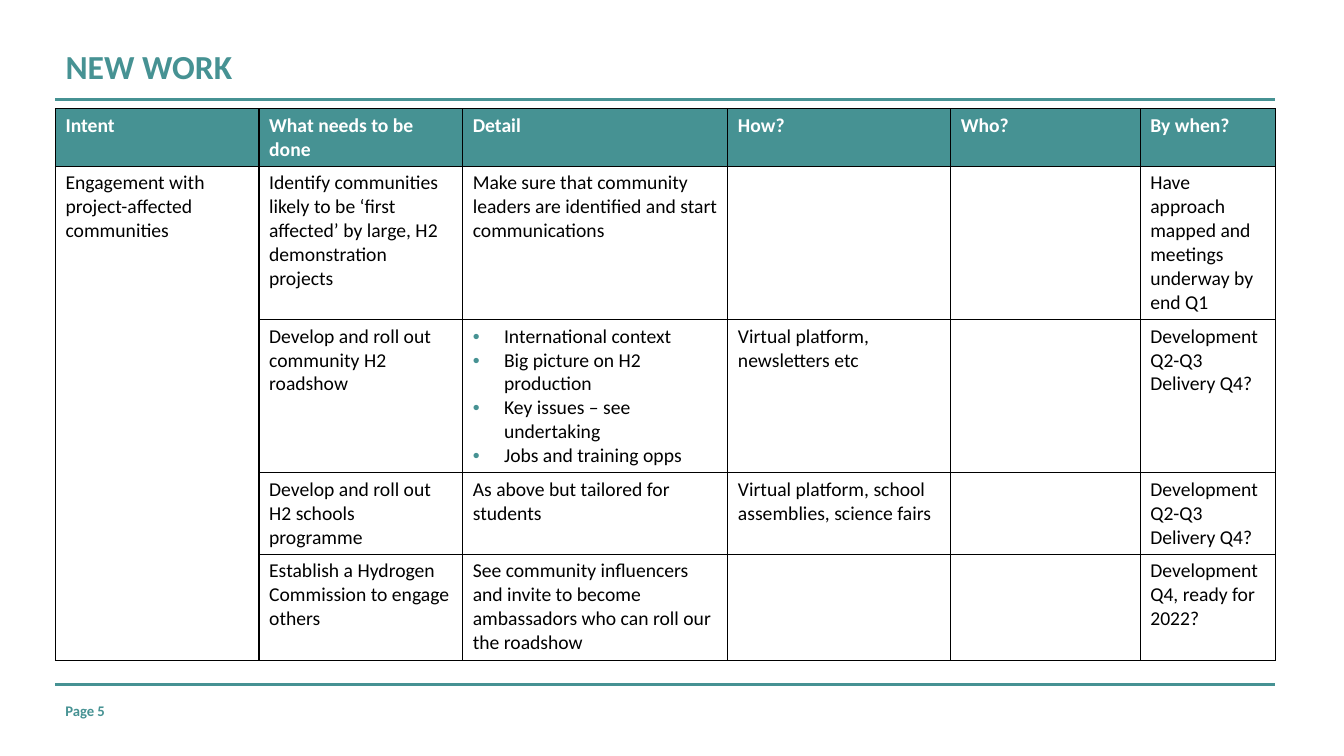
"""Builds the NEW WORK slide: a plan table between two teal rules."""
from lxml import etree
from pptx import Presentation, util as u
from pptx.dml.color import RGBColor
from pptx.enum import shapes, text
from pptx.oxml import ns

PX = 9144
TEAL = RGBColor(0x46, 0x92, 0x93)
BLACK = RGBColor(0, 0, 0)
WHITE = RGBColor(255, 255, 255)

LEFT, WIDTH = 55, 1210
COLS = [202, 202, 263, 221, 188, 134]
ROWS = [57, 152, 152, 81, 105]
PLAN = [
    ["Intent", "What needs to be done", "Detail", "How?", "Who?", "By when?"],
    ["Engagement with project-affected communities",
     "Identify communities likely to be ‘first affected’ by large, H2 demonstration projects",
     "Make sure that community leaders are identified and start communications",
     "", "", "Have approach mapped and meetings underway by end Q1"],
    ["", "Develop and roll out community H2 roadshow",
     "International context\nBig picture on H2 production\n"
     "Key issues – see undertaking\nJobs and training opps",
     "Virtual platform,\nnewsletters etc", "", "Development Q2-Q3\nDelivery Q4?"],
    ["", "Develop and roll out H2 schools programme",
     "As above but tailored for students",
     "Virtual platform, school assemblies, science fairs", "",
     "Development Q2-Q3\nDelivery Q4?"],
    ["", "Establish a Hydrogen Commission to engage others",
     "See community influencers and invite to become ambassadors who can roll our the roadshow",
     "", "", "Development Q4, ready for 2022?"],
]
BULLETS = (2, 2)


def add_run(para, words, size, color, bold):
    run = para.add_run()
    run.text = words
    run.font.name = "Calibri"
    run.font.size = u.Pt(size)
    run.font.bold = bold
    run.font.color.rgb = color


def add_xml(parent, tag, **attrs):
    return etree.SubElement(parent, ns.qn(tag), attrs)


deck = Presentation()
deck.slide_width, deck.slide_height = 1333 * PX, 750 * PX
slide = deck.slides.add_slide(deck.slide_layouts[5])

title = slide.shapes.title
title.left, title.top, title.width, title.height = LEFT * PX, 45 * PX, 1200 * PX, 52 * PX
title.text_frame.auto_size = text.MSO_AUTO_SIZE.NONE
title.text_frame.vertical_anchor = text.MSO_ANCHOR.TOP
head = title.text_frame.paragraphs[0]
head.alignment = text.PP_ALIGN.LEFT
head.line_spacing = 0.9
add_run(head, "NEW WORK", 24, TEAL, True)

for y in (99, 679):
    rule = slide.shapes.add_connector(
        shapes.MSO_CONNECTOR.STRAIGHT, LEFT * PX, y * PX, (LEFT + WIDTH) * PX, y * PX)
    rule.line.color.rgb = TEAL
    rule.line.width = u.Pt(2.25)
    add_xml(rule._element.spPr, "a:effectLst")

footer = slide.shapes.add_textbox(LEFT * PX, 691 * PX, 70 * PX, 26 * PX)
footer.text_frame.word_wrap = True
add_run(footer.text_frame.paragraphs[0], "Page 5", 10.5, TEAL, True)

table = slide.shapes.add_table(
    len(ROWS), len(COLS), LEFT * PX, 108 * PX, WIDTH * PX, sum(ROWS) * PX).table
table.horz_banding = False
table.first_row = False
for col, width in zip(table.columns, COLS):
    col.width = width * PX
for row, height in zip(table.rows, ROWS):
    row.height = height * PX

for r, line in enumerate(PLAN):
    for c, words in enumerate(line):
        cell = table.cell(r, c)
        props = cell._tc.get_or_add_tcPr()
        for side in "LRTB":
            edge = add_xml(props, "a:ln" + side, w=str(u.Pt(1)))
            add_xml(add_xml(edge, "a:solidFill"), "a:srgbClr", val=str(BLACK))
        if r == 0:
            cell.fill.solid()
            cell.fill.fore_color.rgb = TEAL
        else:
            cell.fill.background()
        if not words:
            continue
        for i, item in enumerate(words.split("\n")):
            frame = cell.text_frame
            para = frame.add_paragraph() if i else frame.paragraphs[0]
            if (r, c) == BULLETS:
                mark = para._p.get_or_add_pPr()
                mark.set("marL", str(31 * PX))
                mark.set("indent", str(-31 * PX))
                add_xml(add_xml(mark, "a:buClr"), "a:srgbClr", val=str(TEAL))
                add_xml(mark, "a:buFont", typeface="Arial")
                add_xml(mark, "a:buChar", char="•")
            add_run(para, item, 14, BLACK if r else WHITE, r == 0)

table.cell(1, 0).merge(table.cell(4, 0))
deck.save("out.pptx")
